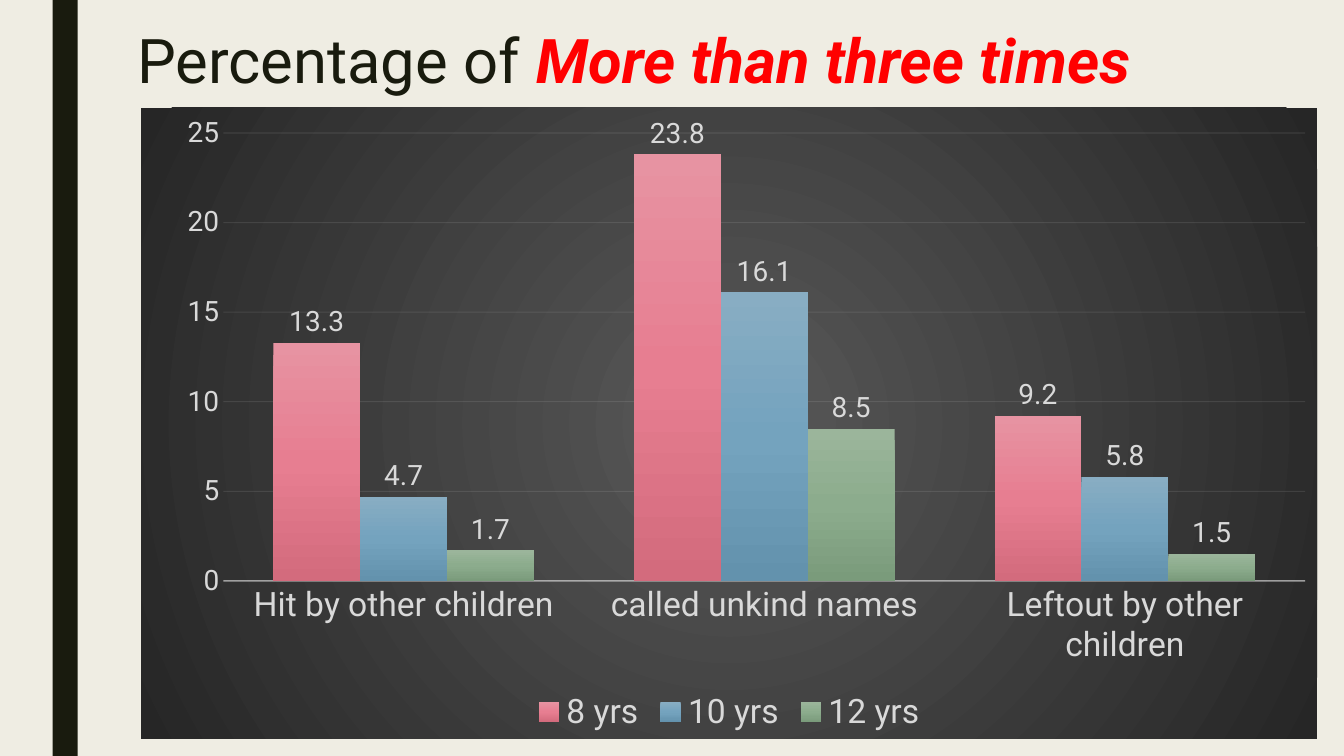
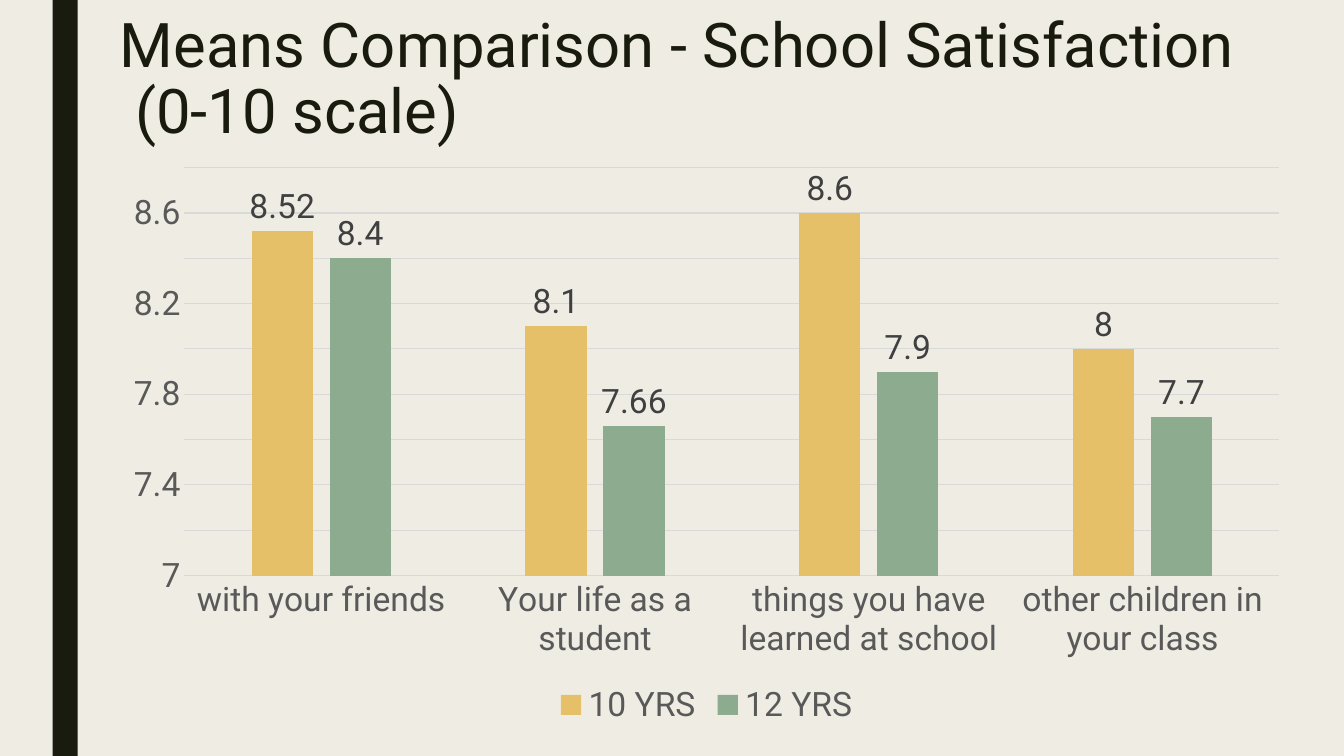
from lxml import etree
from pptx import Presentation
from pptx.chart.data import CategoryChartData
from pptx.dml.color import RGBColor
from pptx.enum.chart import XL_CHART_TYPE, XL_LABEL_POSITION, XL_LEGEND_POSITION, XL_TICK_MARK
from pptx.enum.shapes import MSO_SHAPE
from pptx.enum.text import MSO_ANCHOR, MSO_AUTO_SIZE, PP_ALIGN
from pptx.oxml import parse_xml
from pptx.oxml.ns import nsdecls, qn
from pptx.util import Pt

COLUMNS = XL_CHART_TYPE.COLUMN_CLUSTERED
OUTSIDE = XL_LABEL_POSITION.OUTSIDE_END
BOTTOM = XL_LEGEND_POSITION.BOTTOM
NO_TICK = XL_TICK_MARK.NONE
RECT = MSO_SHAPE.RECTANGLE
TOP = MSO_ANCHOR.TOP
LEFT = PP_ALIGN.LEFT
NO_FIT = MSO_AUTO_SIZE.NONE

FONT = "Roboto"
COLORS = {
    "paper": "EFEDE3", "ink": "191B0E", "accent": "FF0000",
    "light": "D9D9D9", "white": "F2F2F2", "grey": "595959",
    "dark": "404040", "black": "262626",
    "gold": "E6C069", "green": "8DAB8E",
    "pink_top": "E793A2", "pink": "E77E91", "pink_low": "D36B7D",
    "blue_top": "88ADC3", "blue": "74A3BE", "blue_low": "6392AD",
    "leaf_top": "9BB59B", "leaf": "8CAC8D", "leaf_low": "7A9B7B",
}


def rgb(name):
    return RGBColor.from_string(COLORS[name])


def gradient(names, radial=False):
    """Return a gradFill with evenly spaced stops, running downwards or from the centre."""
    step = 100000 // (len(names) - 1)
    stops = "".join(f'<a:gs pos="{i * step}"><a:srgbClr val="{COLORS[n]}"/></a:gs>'
                    for i, n in enumerate(names))
    course = '<a:lin ang="5400000" scaled="0"/>'
    if radial:
        course = ('<a:path path="circle"><a:fillToRect l="50000" t="50000" '
                  'r="50000" b="50000"/></a:path>')
    return parse_xml(f'<a:gradFill {nsdecls("a")}><a:gsLst>{stops}</a:gsLst>{course}</a:gradFill>')


def set_font(font, size, color):
    font.name = FONT
    font.size = Pt(size)
    font.color.rgb = rgb(color)


def set_line(line, color, width, opacity=100):
    line.color.rgb = rgb(color)
    line.width = Pt(width)
    if opacity < 100:
        srgb = line._ln.find(".//" + qn("a:srgbClr"))
        etree.SubElement(srgb, qn("a:alpha")).set("val", str(opacity * 1000))


class Deck:
    def __init__(self):
        self.prs = Presentation()
        self.prs.slide_width, self.prs.slide_height = Pt(960), Pt(540)
        fill = self.prs.slide_master.background.fill
        fill.solid()
        fill.fore_color.rgb = rgb("paper")
        self.s = None

    def new_slide(self):
        self.s = self.prs.slides.add_slide(self.prs.slide_layouts[5])

    def master_band(self, x, y, w, h):
        """Draw the side band and move it to the master, behind everything else."""
        sp = self.s.shapes.add_shape(RECT, Pt(x), Pt(y), Pt(w), Pt(h))
        sp.shadow.inherit = False
        sp.fill.solid()
        sp.fill.fore_color.rgb = rgb("ink")
        sp.line.fill.background()
        self.prs.slide_master.shapes._spTree.insert(2, sp._element)

    def title(self, x, y, w, lines):
        """Fill the title; each line is a list of (text, emphasised) runs."""
        sp = self.s.shapes.title
        sp.left, sp.top, sp.width, sp.height = Pt(x), Pt(y), Pt(w), Pt(116.6)
        tf = sp.text_frame
        tf.word_wrap = True
        tf.auto_size = NO_FIT
        tf.vertical_anchor = TOP
        p = tf.paragraphs[0]
        p.alignment = LEFT
        p.line_spacing = 0.89
        for i, line in enumerate(lines):
            if i:
                p.add_line_break()
            for text, emphasised in line:
                r = p.add_run()
                r.text = text
                set_font(r.font, 44, "accent" if emphasised else "ink")
                if emphasised:
                    r.font.bold = r.font.italic = True

    def chart(self, x, y, w, h, cats, series, scale, gap, overlap=0,
              text="grey", label="dark", value_size=24,
              axis_line=("light", 0.75), grid=("light", 0.75)):
        """Add a column chart; series holds (name, values, colours), scale is (low, high, step)."""
        data = CategoryChartData()
        data.categories = cats
        for name, values, _ in series:
            data.add_series(name, values)
        chart = self.s.shapes.add_chart(COLUMNS, Pt(x), Pt(y), Pt(w), Pt(h), data).chart
        chart.has_title = False
        set_font(chart.font, 10, text)
        chart.has_legend = True
        chart.legend.position = BOTTOM
        chart.legend.include_in_layout = False
        set_font(chart.legend.font, 24, text)

        cat, val = chart.category_axis, chart.value_axis
        for axis, size in ((cat, 24), (val, value_size)):
            axis.major_tick_mark = axis.minor_tick_mark = NO_TICK
            set_font(axis.tick_labels.font, size, text)
        set_line(cat.format.line, *axis_line)
        val.format.line.fill.background()
        val.minimum_scale, val.maximum_scale, val.major_unit = scale
        set_line(val.major_gridlines.format.line, *grid)

        plot = chart.plots[0]
        plot.vary_by_categories = False
        plot.gap_width, plot.overlap = gap, overlap
        for ser, (_, _, colors) in zip(plot.series, series):
            if len(colors) > 1:
                ser._element.get_or_add_spPr().insert(0, gradient(colors))
            else:
                ser.format.fill.solid()
                ser.format.fill.fore_color.rgb = rgb(colors[0])
            labels = ser.data_labels
            labels.show_value = True
            labels.position = OUTSIDE
            set_font(labels.font, value_size, label)
        return chart

    def chart_backdrop(self, chart, names):
        space = chart._chartSpace
        sp_pr = parse_xml(f'<c:spPr {nsdecls("c", "a")}><a:ln><a:noFill/></a:ln></c:spPr>')
        sp_pr.insert(0, gradient(names, radial=True))
        space.find(qn("c:txPr")).addprevious(sp_pr)

    def plot_area(self, chart, x, y, w, h):
        """Fix the inner plot area, in fractions of the chart."""
        area = chart._chartSpace.find(".//" + qn("c:plotArea"))
        for old in area.findall(qn("c:layout")):
            area.remove(old)
        parts = [("layoutTarget", "inner"), ("xMode", "edge"), ("yMode", "edge"),
                 ("x", x), ("y", y), ("w", w), ("h", h)]
        inner = "".join(f'<c:{tag} val="{v}"/>' for tag, v in parts)
        area.insert(0, parse_xml(f'<c:layout {nsdecls("c")}><c:manualLayout>{inner}'
                                 '</c:manualLayout></c:layout>'))


def bullying_slide(deck):
    deck.new_slide()
    deck.title(90.7, 18.7, 756, [[("Percentage of ", False), ("More than three times", True)]])
    chart = deck.chart(
        100.8, 77, 840, 450.7,
        ["Hit by other children", "called unkind names", "Leftout by other children"],
        [("8 yrs", (13.3, 23.8, 9.2), ("pink_top", "pink", "pink_low")),
         ("10 yrs", (4.7, 16.1, 5.8), ("blue_top", "blue", "blue_low")),
         ("12 yrs", (1.7, 8.5, 1.5), ("leaf_top", "leaf", "leaf_low"))],
        scale=(0, 25, 5), gap=115, text="light", label="light", value_size=20,
        axis_line=("white", 1, 54), grid=("white", 0.75, 10))
    deck.chart_backdrop(chart, ("grey", "black"))
    deck.plot_area(chart, 0.07, 0.04, 0.92, 0.71)


def satisfaction_slide(deck):
    deck.new_slide()
    deck.title(78.5, 7.2, 852.5, [[("Means Comparison - School Satisfaction", False)],
                                  [(" (0-10 scale)", False)]])
    deck.chart(
        78.5, 111.6, 852.5, 411,
        ["with your friends", "Your life as a student",
         "things you have learned at school", "other children in your class"],
        [("10 YRS", (8.52, 8.1, 8.6, 8), ("gold",)),
         ("12 YRS", (8.4, 7.66, 7.9, 7.7), ("green",))],
        scale=(7, 8.8, 0.2), gap=219, overlap=-27)


def main():
    deck = Deck()
    bullying_slide(deck)
    deck.master_band(37.5, 0, 18, 540)
    satisfaction_slide(deck)
    deck.prs.save("out.pptx")


if __name__ == "__main__":
    main()
